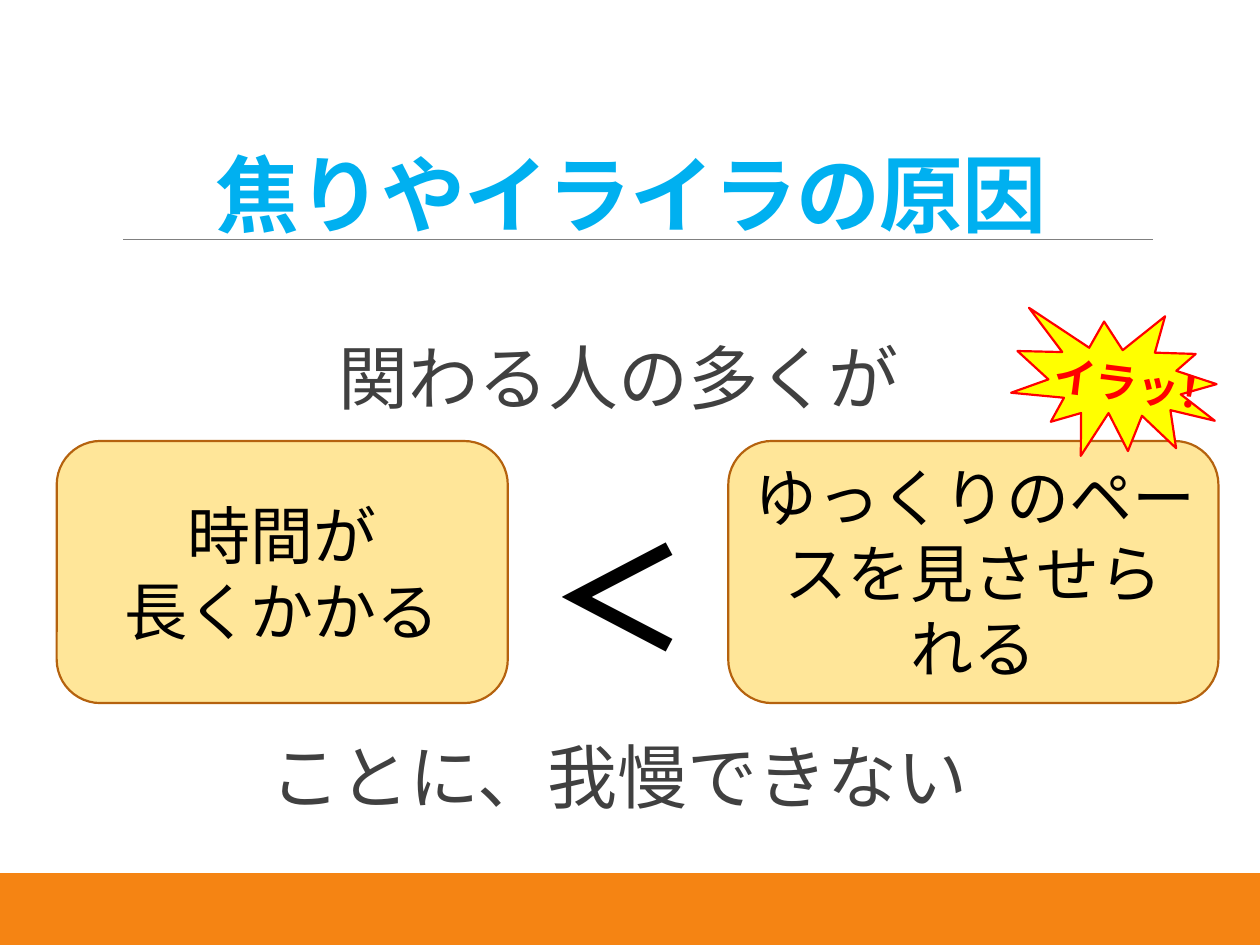
from dataclasses import dataclass

from lxml import etree
from pptx import Presentation
from pptx.dml.color import RGBColor
from pptx.enum.shapes import MSO_CONNECTOR, MSO_SHAPE
from pptx.enum.text import MSO_ANCHOR, PP_ALIGN
from pptx.oxml.ns import qn
from pptx.util import Inches, Pt

RECT, ROUNDED = MSO_SHAPE.RECTANGLE, MSO_SHAPE.ROUNDED_RECTANGLE
BURST, STRAIGHT = MSO_SHAPE.EXPLOSION1, MSO_CONNECTOR.STRAIGHT
TOP, MIDDLE, BOTTOM = MSO_ANCHOR.TOP, MSO_ANCHOR.MIDDLE, MSO_ANCHOR.BOTTOM
LEFT, CENTER = PP_ALIGN.LEFT, PP_ALIGN.CENTER


@dataclass(frozen=True)
class Theme:
    font: str = "Noto Sans CJK JP"
    title: str = "00B0F0"
    body: str = "404040"
    text: str = "000000"
    band: str = "F58413"
    rule: str = "808080"
    card: str = "FFE699"
    card_line: str = "B5620E"
    burst: str = "FFFF00"
    alert: str = "FF0000"
    title_size: int = 48
    body_size: int = 40
    card_size: int = 36
    sign_size: int = 80
    burst_size: int = 24
    outline: float = 1.25


THEME = Theme()


def write(sp, text, size, color, bold=False, align=CENTER, anchor=MIDDLE,
          line_spacing=None, tracking=None):
    tf = sp.text_frame
    tf.word_wrap = True
    tf.vertical_anchor = anchor
    tf.text = text
    for p in tf.paragraphs:
        p.alignment = align
        if line_spacing:
            p.line_spacing = line_spacing
        for r in p.runs:
            r.font.name = THEME.font
            r.font.size = Pt(size)
            r.font.bold = bold
            r.font.color.rgb = RGBColor.from_string(color)
            rPr = r.font._element
            etree.SubElement(rPr, qn("a:ea")).set("typeface", THEME.font)
            if tracking is not None:
                rPr.set("spc", str(int(tracking * 100)))


def add_text(slide, box, text, size, color, **style):
    sp = slide.shapes.add_textbox(*map(Inches, box))
    write(sp, text, size, color, **style)
    return sp


def add_box(slide, kind, box, fill, line=None):
    sp = slide.shapes.add_shape(kind, *map(Inches, box))
    sp.shadow.inherit = False
    sp.fill.solid()
    sp.fill.fore_color.rgb = RGBColor.from_string(fill)
    if line:
        sp.line.color.rgb = RGBColor.from_string(line)
        sp.line.width = Pt(THEME.outline)
    else:
        sp.line.fill.background()
    return sp


def add_footer(slide, box):
    x, y, w, h = box
    edge = 0.07
    add_box(slide, RECT, (x, y + edge, w, h - edge), THEME.band)
    add_box(slide, RECT, (x, y, w, edge), THEME.band)


def add_title(slide, box, text):
    rule_left, rule_right, rule_y = Inches(0.98), Inches(9.15), Inches(1.9)
    rule = slide.shapes.add_connector(STRAIGHT, rule_left, rule_y, rule_right, rule_y)
    rule.line.color.rgb = RGBColor.from_string(THEME.rule)
    rule.line.width = Pt(0.5)
    etree.SubElement(rule._element.spPr, qn("a:effectLst"))
    add_text(slide, box, text, THEME.title_size, THEME.title, bold=True,
             align=LEFT, anchor=BOTTOM, line_spacing=0.85, tracking=-0.5)


def add_statement(slide, box, text):
    sp = add_text(slide, box, text, THEME.body_size, THEME.body,
                  anchor=TOP, line_spacing=0.9)
    sp.text_frame.margin_left = sp.text_frame.margin_right = 0


def add_comparison(slide, box, left_text, sign, right_text):
    x, y, w, h = box
    left_w, right_w = 3.58, 3.89
    cards = ((x, left_w, left_text), (x + w - right_w, right_w, right_text))
    for card_x, card_w, text in cards:
        sp = add_box(slide, ROUNDED, (card_x, y, card_w, h),
                     THEME.card, THEME.card_line)
        write(sp, text, THEME.card_size, THEME.text)
    # Sign fills the gap between the cards
    add_text(slide, (x + left_w, y + 0.47, w - left_w - right_w, 1.5),
             sign, THEME.sign_size, THEME.text, bold=True)


def add_burst(slide, box, text):
    x, y, _, _ = box
    add_box(slide, BURST, box, THEME.burst, THEME.alert).rotation = 10.4
    label = add_text(slide, (x - 0.09, y + 0.08, 2.16, 1.04), text,
                     THEME.burst_size, THEME.alert, bold=True)
    label.rotation = 7.2


def main():
    prs = Presentation()
    prs.slide_width, prs.slide_height = Inches(10), Inches(7.5)
    slide = prs.slides.add_slide(prs.slide_layouts[6])

    # Frame and heading
    add_footer(slide, (0, 6.93, 10, 0.57))
    add_title(slide, (1.61, 0.73, 9, 1.25), "焦りやイライラの原因")

    # Sentence wrapped around the comparison
    add_statement(slide, (0.41, 2.68, 9, 0.8), "関わる人の多くが")
    add_statement(slide, (0.41, 5.85, 9, 0.8), "ことに、我慢できない")
    add_comparison(slide, (0.45, 3.5, 9.22, 2.08), "時間が\n長くかかる", "＜",
                   "ゆっくりのペースを見させられる")

    # Reaction
    add_burst(slide, (8.04, 2.45, 1.64, 1.21), "イラッ！")
    prs.save("out.pptx")


if __name__ == "__main__":
    main()
